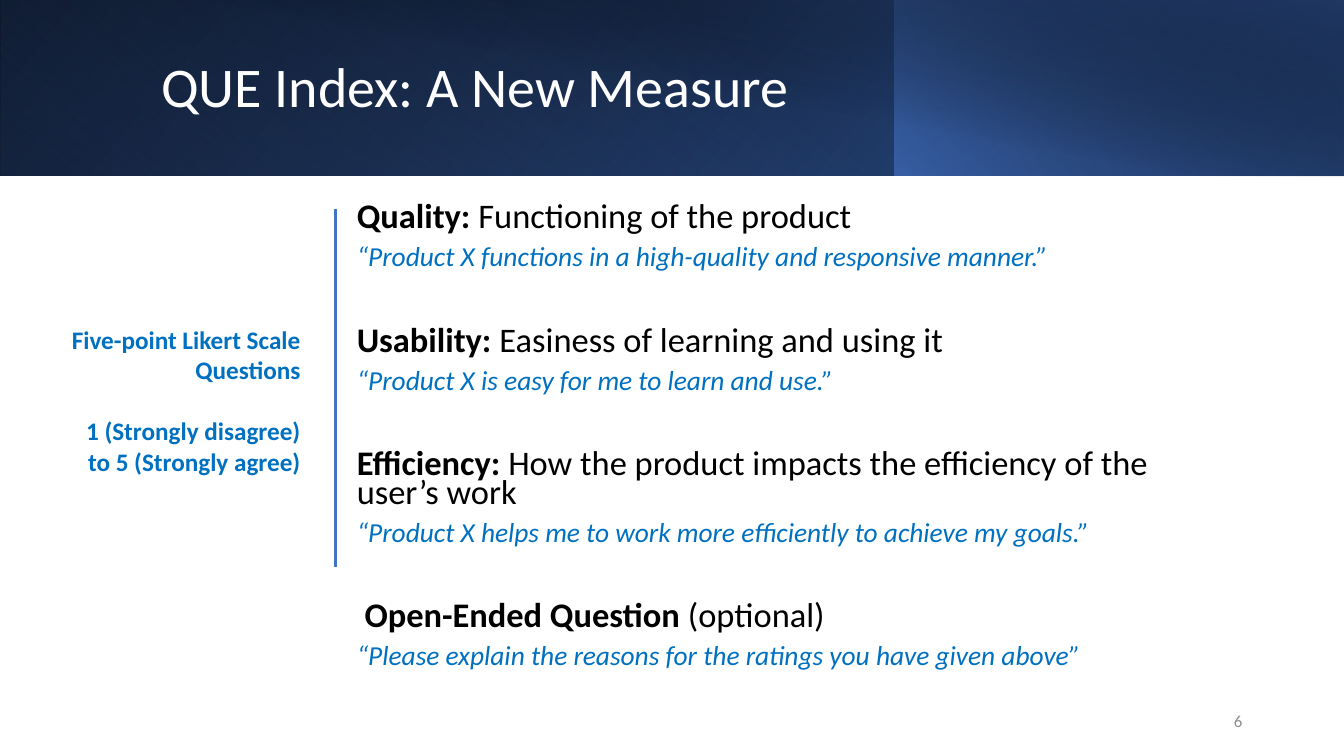
from lxml import etree
from pptx import Presentation
from pptx.dml.color import RGBColor
from pptx.enum.shapes import MSO_CONNECTOR, MSO_SHAPE
from pptx.enum.text import MSO_ANCHOR, MSO_AUTO_SIZE, PP_ALIGN
from pptx.oxml.ns import qn
from pptx.util import Pt

RECTANGLE = MSO_SHAPE.RECTANGLE
STRAIGHT = MSO_CONNECTOR.STRAIGHT
TOP, MIDDLE = MSO_ANCHOR.TOP, MSO_ANCHOR.MIDDLE
LEFT, RIGHT = PP_ALIGN.LEFT, PP_ALIGN.RIGHT
NO_AUTOFIT = MSO_AUTO_SIZE.NONE
TITLE_ONLY = 5
EMU_PER_PX = 9144  # 100 px to the inch

BLACK, WHITE, GREY = "000000", "FFFFFF", "8C8C8C"
BLUE, NAVY, DEEP_BLUE, QUOTE_BLUE = "4472C4", "203864", "2F5597", "0070C0"

# box, gradient angle, (position, colour, opacity) stops, mirrored, rotation
BANNER_LAYERS = [
    ((0, 0, 1333, 174), 140, [(0, BLACK, 100), (100, DEEP_BLUE, 100)], True, 0),
    ((0, 0, 888, 174), 230, [(20, BLUE, 0), (100, NAVY, 55)], True, 180),
    ((887, 0, 446, 174), 220, [(0, BLUE, 66), (100, BLACK, 30)], True, 0),
    ((50, 0, 1283, 175), 280, [(50, BLACK, 0), (99, NAVY, 52)], False, 0),
]
QUESTIONS = [
    ("Quality: ", "Functioning of the product",
     "“Product X functions in a high-quality and responsive manner.”"),
    ("Usability: ", "Easiness of learning and using it",
     "“Product X is easy for me to learn and use.”"),
    ("Efficiency: ", "How the product impacts the efficiency of the user’s work",
     "“Product X helps me to work more efficiently to achieve my goals.”"),
    (" Open-Ended Question ", "(optional)",
     "“Please explain the reasons for the ratings you have given above”"),
]
SCALE_NOTES = ["Five-point Likert Scale Questions",
               "1 (Strongly disagree) to 5 (Strongly agree)"]


def px(length):
    return round(length * EMU_PER_PX)


def rgb(value):
    return RGBColor.from_string(value)


class SlideBuilder:
    def __init__(self, slide, font="Calibri"):
        self.slide = slide
        self.shapes = slide.shapes
        self.font = font

    def gradient_box(self, box, angle, stops, mirrored, rotation):
        """Add a two-stop gradient rectangle; angle runs clockwise."""
        layer = self.shapes.add_shape(RECTANGLE, *map(px, box))
        layer.shadow.inherit = False
        layer.line.fill.background()
        layer.rotation = rotation
        properties = layer.element.spPr
        if mirrored:
            properties.find(qn("a:xfrm")).set("flipH", "1")
        layer.fill.gradient()
        layer.fill.gradient_angle = 360 - angle
        nodes = properties.iter(qn("a:gs"))
        for stop, node, (position, color, opacity) in zip(layer.fill.gradient_stops, nodes, stops):
            stop.position = position / 100
            stop.color.rgb = rgb(color)
            if opacity < 100:
                alpha = etree.SubElement(node[0], qn("a:alpha"))
                alpha.set("val", str(opacity * 1000))

    def title(self, text, box, **style):
        title = self.shapes.title
        title.left, title.top, title.width, title.height = map(px, box)
        self.shapes.element.append(title.element)  # in front of the banner
        self.frame(title, MIDDLE)
        self.add_text(title, [(text, {})], **style)

    def text_box(self, box, anchor=TOP):
        area = self.shapes.add_textbox(*map(px, box))
        self.frame(area, anchor)
        return area

    def frame(self, area, anchor):
        area.text_frame.word_wrap = True
        area.text_frame.auto_size = NO_AUTOFIT
        area.text_frame.vertical_anchor = anchor

    def add_text(self, area, runs, size=18, color=BLACK, bold=False, italic=False,
                 align=LEFT, line_spacing=1.0, before=0):
        """Add a paragraph of (text, overrides) runs, using the empty first one."""
        frame = area.text_frame
        first = frame.paragraphs[0]
        paragraph = frame.add_paragraph() if first.runs else first
        paragraph.alignment = align
        paragraph.line_spacing = line_spacing
        paragraph.space_before = Pt(before)
        for text, overrides in runs:
            run = paragraph.add_run()
            run.text = text
            run.font.name = self.font
            run.font.size = Pt(size)
            run.font.bold = overrides.get("bold", bold)
            run.font.italic = italic
            run.font.color.rgb = rgb(color)

    def line(self, start, end, color, width):
        rule = self.shapes.add_connector(STRAIGHT, *map(px, start + end))
        rule.line.color.rgb = rgb(color)
        rule.line.width = Pt(width)
        etree.SubElement(rule.element.spPr, qn("a:effectLst"))


def main():
    deck = Presentation()
    deck.slide_width, deck.slide_height = px(1333), px(750)
    builder = SlideBuilder(deck.slides.add_slide(deck.slide_layouts[TITLE_ONLY]))

    for layer in BANNER_LAYERS:
        builder.gradient_box(*layer)
    builder.title("QUE Index: A New Measure", (150, 32, 1082, 113),
                  size=40, color=WHITE, line_spacing=0.9)

    questions = builder.text_box((344, 199, 875, 479))
    for index, (term, meaning, quote) in enumerate(QUESTIONS):
        builder.add_text(questions, [(term, {"bold": True}), (meaning, {})],
                         size=24.6, line_spacing=0.7, before=41 if index else 10)
        builder.add_text(questions, [(quote, {})], size=19.6, color=QUOTE_BLUE,
                         italic=True, line_spacing=0.7, before=10)

    scale = builder.text_box((50, 317, 258, 162))
    for index, note in enumerate(SCALE_NOTES):
        builder.add_text(scale, [(note, {})], color=QUOTE_BLUE, bold=True,
                         align=RIGHT, before=22 * index)
    builder.line((333, 207), (333, 563), BLUE, 2.25)

    page_number = builder.text_box((942, 695, 300, 40), MIDDLE)
    builder.add_text(page_number, [("6", {})], size=12, color=GREY, align=RIGHT)

    deck.save("out.pptx")


if __name__ == "__main__":
    main()
